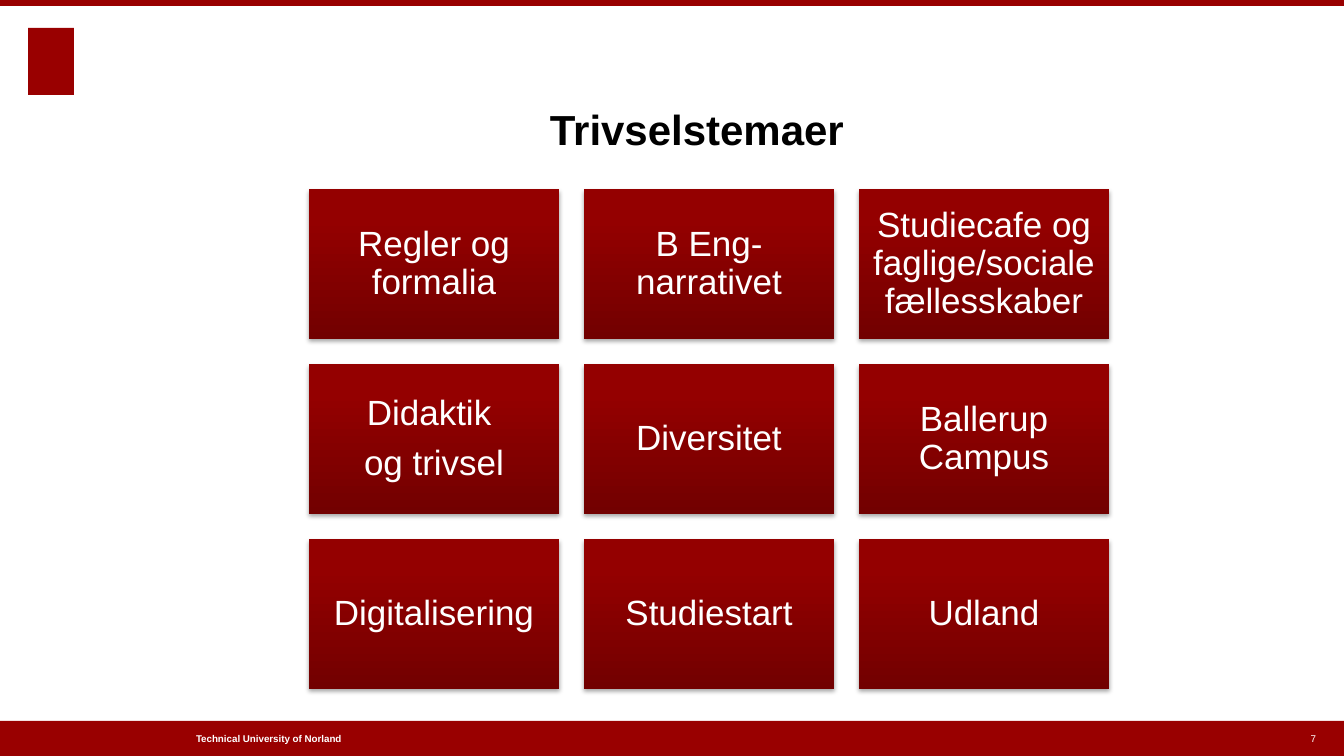
from copy import deepcopy

from lxml import etree
from pptx import Presentation
from pptx.dml.color import RGBColor
from pptx.enum.shapes import MSO_SHAPE
from pptx.enum.text import MSO_ANCHOR, MSO_AUTO_SIZE, PP_ALIGN
from pptx.oxml.ns import qn
from pptx.util import Emu, Pt

RECTANGLE = MSO_SHAPE.RECTANGLE
MIDDLE, BOTTOM = MSO_ANCHOR.MIDDLE, MSO_ANCHOR.BOTTOM
LEFT, CENTER, RIGHT = PP_ALIGN.LEFT, PP_ALIGN.CENTER, PP_ALIGN.RIGHT
NO_AUTOFIT = MSO_AUTO_SIZE.NONE

RED = RGBColor(0x99, 0x00, 0x00)
BLACK = RGBColor(0x00, 0x00, 0x00)
WHITE = RGBColor(0xFF, 0xFF, 0xFF)
TILE_STOPS = [
    (0, RGBColor(0x72, 0x00, 0x00)),
    (0.8, RGBColor(0x94, 0x00, 0x00)),
    (1, RGBColor(0x95, 0x00, 0x00)),
]
PX = 914400 / 100.8


def place(shape, *bounds):
    for name, length in zip(("left", "top", "width", "height"), bounds):
        setattr(shape, name, Emu(round(length * PX)))


def write(shape, lines, size, color, align, anchor=MIDDLE, bold=False, inset=0, **spacing):
    frame = shape.text_frame
    margin = Emu(round(inset * PX))
    frame_format = {
        "word_wrap": True, "auto_size": NO_AUTOFIT, "vertical_anchor": anchor,
        "margin_left": margin, "margin_top": margin,
        "margin_right": margin, "margin_bottom": margin,
    }
    for name, value in frame_format.items():
        setattr(frame, name, value)
    for index, line in enumerate(lines):
        para = frame.add_paragraph() if index else frame.paragraphs[0]
        for name, value in {"alignment": align, **spacing}.items():
            setattr(para, name, value)
        span = para.add_run()
        span.text = line
        span.font.color.rgb = color
        for name, value in {"name": "Arial", "size": Pt(size), "bold": bold}.items():
            setattr(span.font, name, value)


deck = Presentation()
deck.slide_width, deck.slide_height = Emu(round(1344 * PX)), Emu(round(756 * PX))
page = deck.slides.add_slide(deck.slide_layouts[5])

# Top and bottom bars, with a plain block in the emblem's place
for bounds in [(0, 721, 1344, 35), (28, 28, 46, 67), (0, 0, 1344, 6)]:
    block = page.shapes.add_shape(RECTANGLE, 0, 0, 0, 0)
    place(block, *bounds)
    block.fill.solid()
    block.fill.fore_color.rgb = RED
    block.line.fill.background()
    block.shadow.inherit = False

# Title
title = page.shapes.title
place(title, 196, 47, 1002, 107)
write(title, ["Trivselstemaer"], 30, BLACK, CENTER, BOTTOM, bold=True)

# Footer text and page number
footers = [
    ("Technical University of Norland", 196, 375, LEFT, True),
    ("7", 1268, 48, RIGHT, False),
]
for text, left, width, align, bold in footers:
    footer = page.shapes.add_textbox(0, 0, 0, 0)
    place(footer, left, 721, width, 35)
    write(footer, [text], 7, WHITE, align, bold=bold)

# Theme tiles in a three by three grid
themes = [
    ["Regler og formalia"], ["B Eng-narrativet"],
    ["Studiecafe og faglige/sociale fællesskaber"],
    ["Didaktik ", "og trivsel"], ["Diversitet"], ["Ballerup Campus"],
    ["Digitalisering"], ["Studiestart"], ["Udland"],
]
for index, lines in enumerate(themes):
    row, column = divmod(index, 3)
    tile = page.shapes.add_shape(RECTANGLE, 0, 0, 0, 0)
    place(tile, 309 + 275 * column, 189 + 175 * row, 250, 150)
    write(tile, lines, 25, WHITE, CENTER, inset=10,
          line_spacing=0.9, space_after=Pt(8.75))
    tile.line.fill.background()

    # Gradient, dark at the bottom
    tile.fill.gradient()
    tile.fill.gradient_angle = 90
    properties = tile._element.spPr
    stop_list = next(properties.iter(qn("a:gsLst")))
    stop_list.append(deepcopy(stop_list[0]))
    for stop, (position, color) in zip(tile.fill.gradient_stops, TILE_STOPS):
        stop.position = position
        stop.color.rgb = color

    # Soft shadow below
    tile.shadow.inherit = False
    shadow = etree.SubElement(
        properties.find(qn("a:effectLst")), qn("a:outerShdw"),
        blurRad="40000", dist="23000", dir="5400000", rotWithShape="0")
    shade = etree.SubElement(shadow, qn("a:srgbClr"), val=str(BLACK))
    etree.SubElement(shade, qn("a:alpha"), val="35000")

deck.save("out.pptx")
